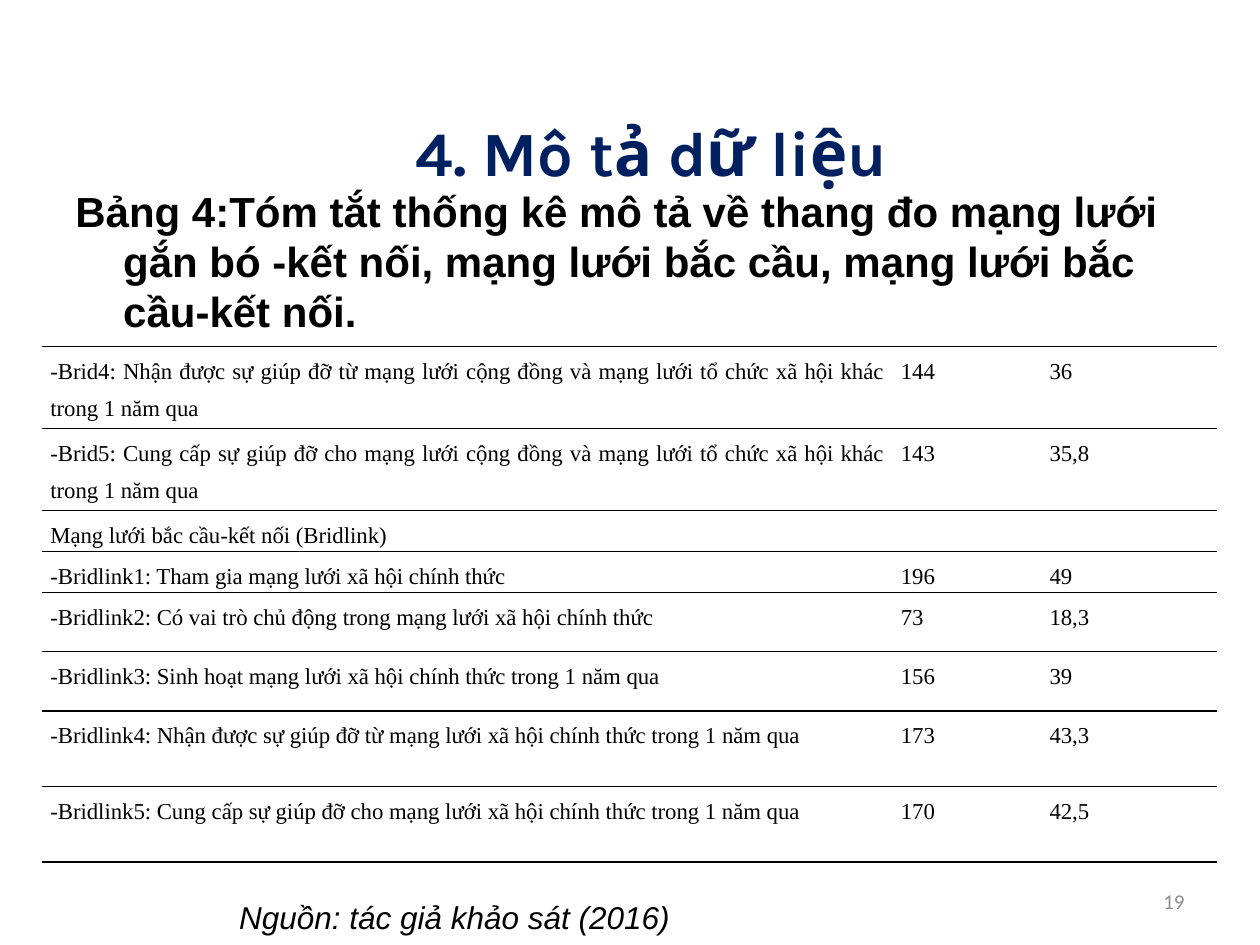
import dataclasses

import lxml.etree
import pptx
import pptx.dml.color
import pptx.enum.text
import pptx.oxml.ns
import pptx.util

Inches = pptx.util.Inches
Align = pptx.enum.text.PP_ALIGN
Anchor = pptx.enum.text.MSO_ANCHOR


@dataclasses.dataclass(frozen=True)
class Style:
    font: str
    size: int
    color: str = "000000"
    bold: bool = False
    italic: bool = False


@dataclasses.dataclass(frozen=True)
class Theme:
    title: Style = Style("Karla", 36, "002060", bold=True)
    caption: Style = Style("Arial", 24, bold=True)
    source: Style = Style("Arial", 18, italic=True)
    number: Style = Style("Calibri", 12, "8C8C8C")
    cell: Style = Style("Times New Roman", 13)
    paper: str = "FFFFFF"
    rule: str = "000000"


class PageBuilder:
    """Builds styled elements on the current slide."""

    def __init__(self, page, theme):
        self.page = page
        self.theme = theme

    def fill_text(self, frame, text, style, align, anchor=Anchor.MIDDLE):
        frame.word_wrap = True
        frame.vertical_anchor = anchor
        frame.text = text
        para = frame.paragraphs[0]
        para.alignment = align
        for span in para.runs:
            font = span.font
            font.name = style.font
            font.size = pptx.util.Pt(style.size)
            font.bold = style.bold
            font.italic = style.italic
            font.color.rgb = pptx.dml.color.RGBColor.from_string(style.color)
        return para

    def title(self, text, left, top, width, height):
        box = self.page.shapes.title
        box.left, box.top = Inches(left), Inches(top)
        box.width, box.height = Inches(width), Inches(height)
        self.fill_text(box.text_frame, text, self.theme.title, Align.CENTER)

    def text(self, text, place, style, align=Align.LEFT, anchor=Anchor.MIDDLE, hanging=0):
        box = self.page.shapes.add_textbox(*map(Inches, place))
        para = self.fill_text(box.text_frame, text, style, align, anchor)
        if hanging:
            properties = para._p.get_or_add_pPr()
            properties.set("marL", str(Inches(hanging)))
            properties.set("indent", str(-Inches(hanging)))

    def borders(self, cell):
        properties = cell._tc.get_or_add_tcPr()
        for side in "LRTB":
            line = lxml.etree.SubElement(properties, pptx.oxml.ns.qn(f"a:ln{side}"))
            if side in "LR":
                lxml.etree.SubElement(line, pptx.oxml.ns.qn("a:noFill"))
                continue
            line.set("w", str(pptx.util.Pt(1)))
            fill = lxml.etree.SubElement(line, pptx.oxml.ns.qn("a:solidFill"))
            lxml.etree.SubElement(fill, pptx.oxml.ns.qn("a:srgbClr"), val=self.theme.rule)

    def table(self, rows, left, top, widths, heights):
        table = self.page.shapes.add_table(
            len(rows), len(widths), Inches(left), Inches(top),
            Inches(sum(widths)), Inches(sum(heights))).table
        table.first_row = table.horz_banding = False
        for column, width in zip(table.columns, widths):
            column.width = Inches(width)
        for row, height, values in zip(table.rows, heights, rows):
            row.height = Inches(height)
            for cell, value in zip(row.cells, values):
                self.cell(cell, value)

    def cell(self, cell, value):
        cell.margin_left = cell.margin_right = Inches(0.07)
        cell.margin_top = cell.margin_bottom = 0
        self.borders(cell)
        cell.fill.solid()
        cell.fill.fore_color.rgb = pptx.dml.color.RGBColor.from_string(self.theme.paper)
        if value:
            para = self.fill_text(cell.text_frame, value, self.theme.cell, Align.JUSTIFY, Anchor.TOP)
            para.line_spacing = 1.5


ROWS = [
    ("-Brid4: Nhận được sự giúp đỡ từ mạng lưới cộng đồng và mạng lưới tổ chức xã hội khác trong 1 năm qua", "144", "36"),
    ("-Brid5: Cung cấp sự giúp đỡ cho mạng lưới cộng đồng và mạng lưới tổ chức xã hội khác trong 1 năm qua", "143", "35,8"),
    ("Mạng lưới bắc cầu-kết nối (Bridlink)", "", ""),
    ("-Bridlink1: Tham gia mạng lưới xã hội chính thức", "196", "49"),
    ("-Bridlink2: Có vai trò chủ động trong mạng lưới xã hội chính thức", "73", "18,3"),
    ("-Bridlink3: Sinh hoạt mạng lưới xã hội chính thức trong 1 năm qua", "156", "39"),
    ("-Bridlink4: Nhận được sự giúp đỡ từ mạng lưới xã hội chính thức trong 1 năm qua", "173", "43,3"),
    ("-Bridlink5: Cung cấp sự giúp đỡ cho mạng lưới xã hội chính thức trong 1 năm qua", "170", "42,5"),
]


def main():
    deck = pptx.Presentation()
    deck.slide_width, deck.slide_height = Inches(10), Inches(7.5)
    theme = Theme()
    builder = PageBuilder(deck.slides.add_slide(deck.slide_layouts[5]), theme)
    builder.title("4. Mô tả dữ liệu", 0.67, 0.83, 9, 0.75)
    builder.text(
        "Bảng 4:Tóm tắt thống kê mô tả về thang đo mạng lưới gắn bó -kết nối, "
        "mạng lưới bắc cầu, mạng lưới bắc cầu-kết nối.",
        (0.5, 1.42, 9, 5.12), theme.caption, anchor=Anchor.TOP, hanging=0.38)
    builder.text("19", (7.17, 6.95, 2.33, 0.4), theme.number, Align.RIGHT)
    builder.text("Nguồn: tác giả khảo sát (2016)", (1.8, 7.08, 5.78, 0.4), theme.source)
    builder.table(ROWS, 0.33, 2.75, (6.75, 1.18, 1.4),
                  (0.65, 0.65, 0.32, 0.32, 0.47, 0.47, 0.6, 0.6))
    deck.save("out.pptx")


if __name__ == "__main__":
    main()
